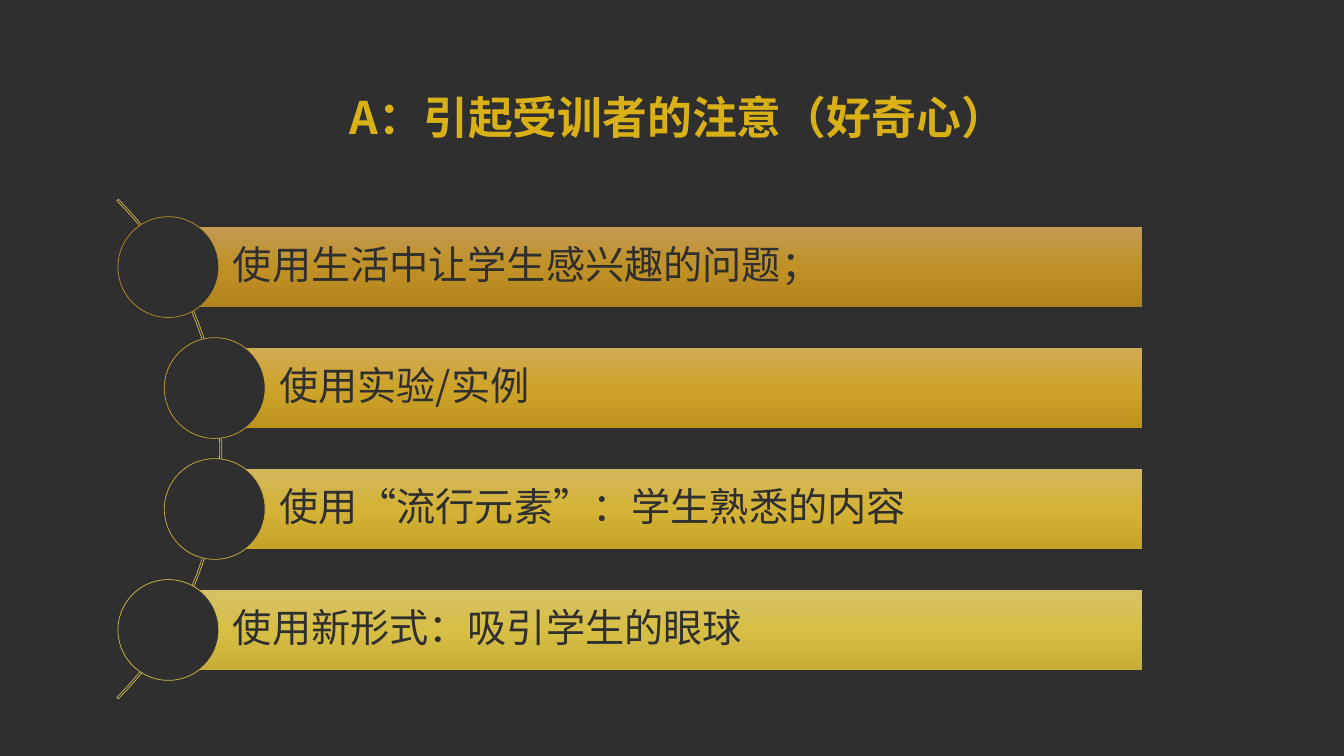
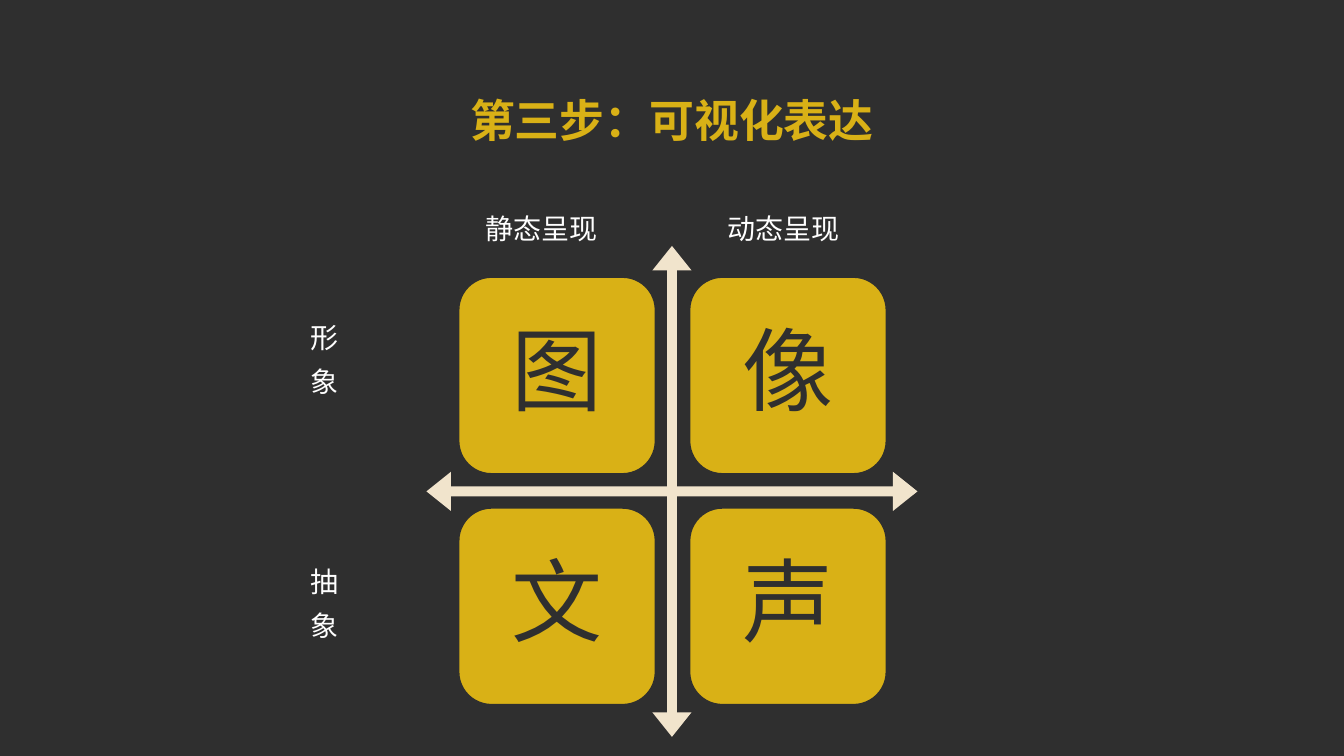
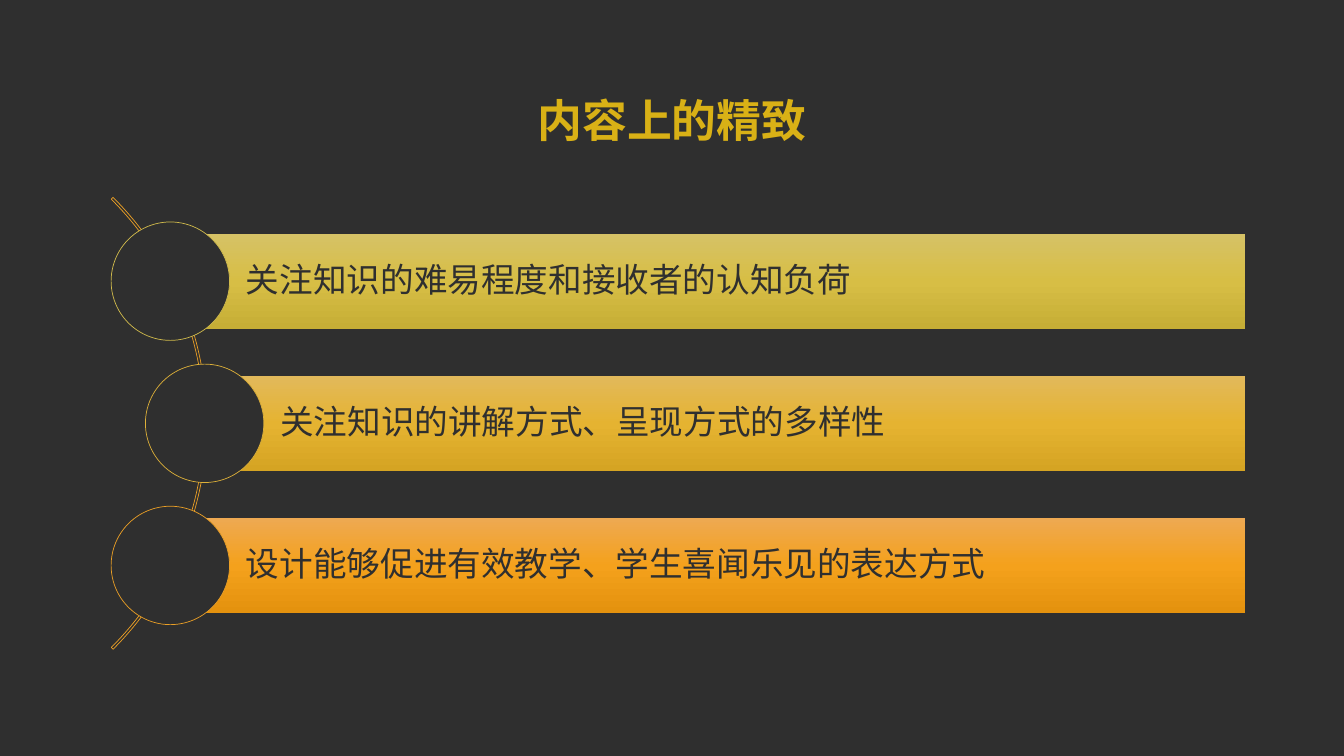
from copy import deepcopy
from dataclasses import dataclass

from pptx import Presentation
from pptx.dml.color import RGBColor
from pptx.enum.shapes import MSO_SHAPE
from pptx.enum.text import MSO_ANCHOR, MSO_AUTO_SIZE, PP_ALIGN
from pptx.oxml.ns import qn
from pptx.util import Inches, Pt


@dataclass(frozen=True)
class Theme:
    dark: str = "2F2F2F"
    gold: str = "D9B116"
    cream: str = "F1E4CC"
    white: str = "FFFFFF"
    sans: str = "Noto Sans CJK SC"
    plain: str = "Arial"
    title: int = 32
    label: int = 20
    tile: int = 65
    hair: float = 0.5
    tight: float = 0.9
    loose: float = 1.3


THEME = Theme()
OLIVE = ("D6C266", "D7BE45", "C6AE36")


def color(code):
    return RGBColor.from_string(code)


def write(shape, text, size, tone, face, align=PP_ALIGN.LEFT,
          anchor=MSO_ANCHOR.MIDDLE, space=THEME.tight, bold=False):
    frame = shape.text_frame
    frame.text = text
    frame.word_wrap = True
    frame.auto_size = MSO_AUTO_SIZE.NONE
    frame.vertical_anchor = anchor
    for para in frame.paragraphs:
        para.alignment = align
        para.line_spacing = space
        for run in para.runs:
            font = run.font
            font.name, font.size, font.bold = face, Pt(size), bold
            font.color.rgb = color(tone)
            east = run._r.get_or_add_rPr().makeelement(qn("a:ea"), {"typeface": THEME.sans})
            run._r.rPr.find(qn("a:latin")).addnext(east)


def inset(shape, left, rest):
    frame = shape.text_frame
    frame.margin_left = Inches(left)
    frame.margin_top = frame.margin_right = frame.margin_bottom = Inches(rest)


def draw(slide, kind, box, fill=None, line=None, width=THEME.hair):
    shape = slide.shapes.add_shape(kind, *map(Inches, box))
    shape.shadow.inherit = False
    if fill:
        shape.fill.solid()
        shape.fill.fore_color.rgb = color(fill)
    else:
        shape.fill.background()
    if line:
        shape.line.color.rgb = color(line)
        shape.line.width = Pt(width)
    else:
        shape.line.fill.background()
    return shape


def adjust(shape, values):
    for index, value in enumerate(values):
        shape.adjustments[index] = value


def shade(shape, tones):
    shape.fill.gradient()
    shape.fill.gradient_angle = 270
    stops = shape._element.spPr.find(".//" + qn("a:gsLst"))
    stops.append(deepcopy(stops[-1]))
    for index, (stop, tone) in enumerate(zip(shape.fill.gradient_stops, tones)):
        stop.position = index / 2
        stop.color.rgb = color(tone)


def start(deck, text, left=0.62, top=0.74, face=THEME.sans):
    slide = deck.slides.add_slide(deck.slide_layouts[5])
    title = slide.shapes.title
    title.left, title.top = Inches(left), Inches(top)
    title.width, title.height = Inches(12.09), Inches(0.77)
    write(title, text, THEME.title, THEME.gold, face, PP_ALIGN.CENTER,
          MSO_ANCHOR.BOTTOM, bold=True)
    return slide


def curve(slide, left, top, side, depth, line):
    arc = draw(slide, MSO_SHAPE.BLOCK_ARC, (left, top, side, side), line=line)
    adjust(arc, (189, 27, depth))


def bars(slide, rows, top, pitch, high, right, size, pad, edge):
    ring = high * 1.25
    for index, (text, left, tones, line) in enumerate(rows):
        y = top + index * pitch
        bar = draw(slide, MSO_SHAPE.RECTANGLE, (left, y, right - left, high))
        shade(bar, tones)
        inset(bar, pad, edge)
        write(bar, text, size, THEME.dark, THEME.sans)
        spot = (left - ring / 2, y + (high - ring) / 2, ring, ring)
        draw(slide, MSO_SHAPE.OVAL, spot, THEME.dark, line)


def tiles(slide, rows, left, top, pitch, side):
    for row, line in enumerate(rows):
        for col, text in enumerate(line):
            box = (left + col * pitch, top + row * pitch, side, side)
            tile = draw(slide, MSO_SHAPE.ROUNDED_RECTANGLE, box, THEME.gold, THEME.dark, 1)
            inset(tile, 0.27, 0.27)
            write(tile, text, THEME.tile, THEME.dark, THEME.plain, PP_ALIGN.CENTER)


def label(slide, text, *box):
    note = slide.shapes.add_textbox(*map(Inches, box))
    write(note, text, THEME.label, THEME.white, THEME.plain,
          anchor=MSO_ANCHOR.TOP, space=THEME.loose)


def focus(deck):
    slide = start(deck, "A：引起受训者的注意（好奇心）", 0.68, 0.71)
    curve(slide, -4.81, 0.95, 7.01, 0.003, "D0BA4C")
    rows = (
        ("使用生活中让学生感兴趣的问题；", 1.67, ("C39B53", "C09126", "B1831C"), "B98E2D"),
        ("使用实验/实例", 2.13, ("D0AB55", "CEA32A", "BE941F"), "C6A032"),
        ("使用“流行元素”：学生熟悉的内容", 2.13, ("D4B75D", "D4B336", "C5A328"), "CDAE3D"),
        ("使用新形式：吸引学生的眼球", 1.67, OLIVE, "D0BA4C"),
    )
    bars(slide, rows, top=2.25, pitch=1.2, high=0.8, right=11.33, size=28, pad=0.64, edge=0.08)


def matrix(deck):
    slide = start(deck, "第三步：可视化表达", face=THEME.plain)
    cross = draw(slide, MSO_SHAPE.QUAD_ARROW, (4.23, 2.44, 4.87, 4.87), THEME.cream)
    adjust(cross, (0.02, 0.04, 0.05))
    tiles(slide, ("图像", "文声"), left=4.55, top=2.75, pitch=2.29, side=1.95)
    label(slide, "静态呈现", 4.72, 1.95, 1.42, 0.54)
    label(slide, "动态呈现", 7.12, 1.95, 1.73, 0.54)
    label(slide, "形象", 2.98, 3.03, 0.44, 0.93)
    label(slide, "抽象", 2.98, 5.45, 0.44, 0.98)


def polish(deck):
    slide = start(deck, "内容上的精致")
    curve(slide, -4.29, 1.03, 6.34, 0.004, "EA9F26")
    rows = (
        ("关注知识的难易程度和接收者的认知负荷", 1.69, OLIVE, "D0BA4C"),
        ("关注知识的讲解方式、呈现方式的多样性", 2.03, ("E2B95B", "E5B331", "D5A423"), "DDB039"),
        ("设计能够促进有效教学、学生喜闻乐见的表达方式", 1.69,
         ("EEA952", "F4A11C", "E4920E"), "EA9F26"),
    )
    bars(slide, rows, top=2.32, pitch=1.41, high=0.94, right=12.35, size=24, pad=0.75, edge=0.07)


def main():
    deck = Presentation()
    deck.slide_width, deck.slide_height = Inches(13.33), Inches(7.5)
    ground = deck.slide_master.background.fill
    ground.solid()
    ground.fore_color.rgb = color(THEME.dark)
    focus(deck)
    matrix(deck)
    polish(deck)
    deck.save("out.pptx")


if __name__ == "__main__":
    main()
